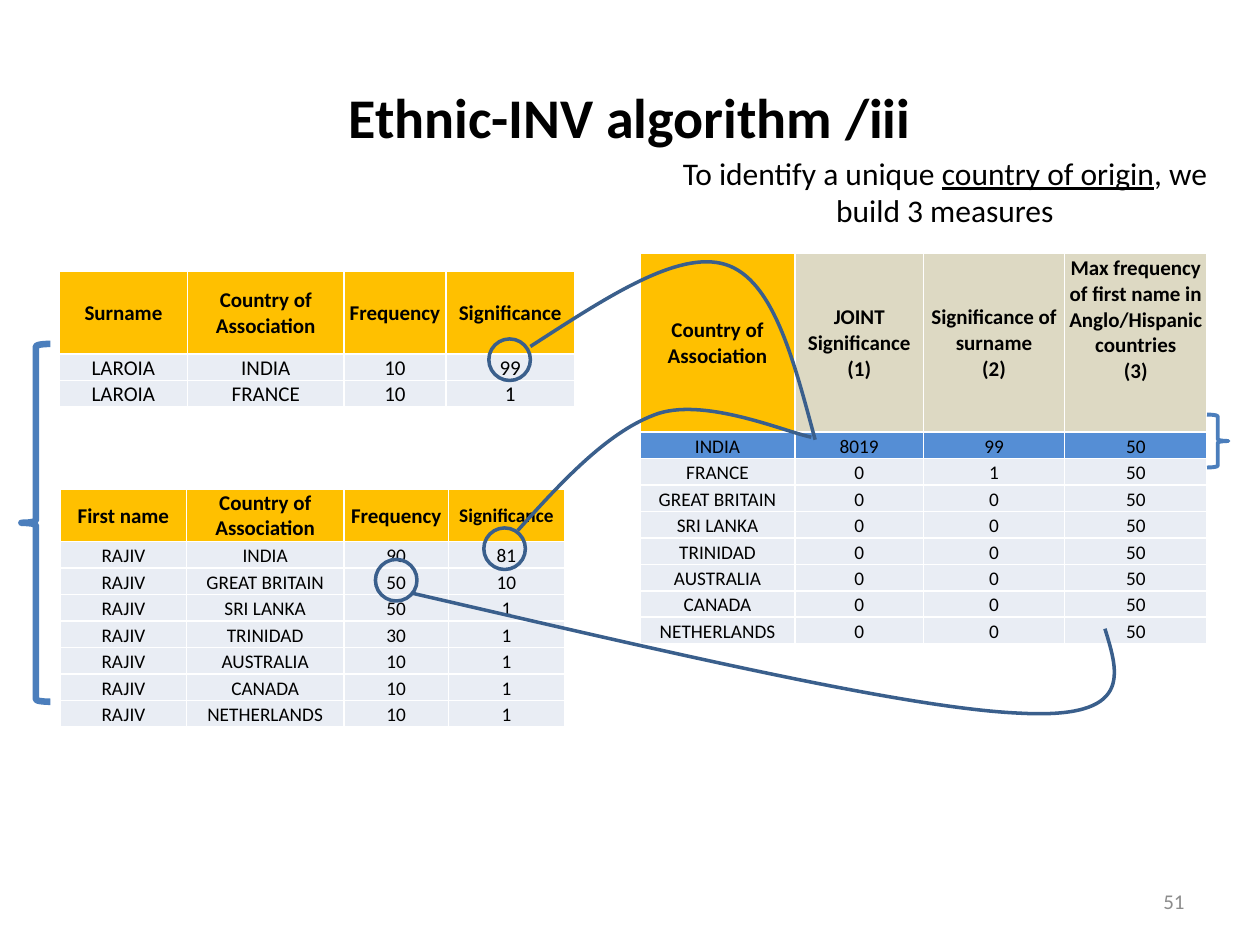
from lxml.etree import SubElement
from pptx import Presentation
from pptx.dml.color import RGBColor
from pptx.enum.shapes import MSO_SHAPE
from pptx.enum.text import MSO_ANCHOR, PP_ALIGN
from pptx.oxml.ns import qn
from pptx.util import Inches, Pt

COLORS = {
    "black": "000000",
    "grey": "8C8C8C",
    "white": "FFFFFF",
    "amber": "FFC000",
    "sand": "DDD9C3",
    "pale": "E9EDF4",
    "highlight": "558ED5",
    "brace": "4B7EBC",
    "mark": "3A5F8C",
}


def write(frame, text, size=12, color="black", bold=False, align=PP_ALIGN.CENTER,
          anchor=MSO_ANCHOR.MIDDLE, underlined=""):
    frame.word_wrap = True
    frame.vertical_anchor = anchor
    for number, line in enumerate(text.split("\n")):
        para = frame.paragraphs[0] if number == 0 else frame.add_paragraph()
        para.alignment = align
        for part in line.partition(underlined) if underlined else [line]:
            span = para.add_run()
            span.text = part
            span.font.name = "Calibri"
            span.font.size = Pt(size)
            span.font.bold = bold
            span.font.underline = part == underlined
            span.font.color.rgb = RGBColor.from_string(COLORS[color])


def outline(shape, color, width):
    shape.shadow.inherit = False
    shape.fill.background()
    shape.line.color.rgb = RGBColor.from_string(COLORS[color])
    shape.line.width = Pt(width)


deck = Presentation()
deck.slide_width, deck.slide_height = Inches(10), Inches(7.5)
page = deck.slides.add_slide(deck.slide_layouts[5])

title = page.shapes.title
title.left, title.top = Inches(0.5), Inches(0.3)
title.width, title.height = Inches(9), Inches(1.25)
write(title.text_frame, "Ethnic-INV algorithm /iii", size=32, bold=True)

number_box = page.shapes.add_textbox(Inches(7.17), Inches(6.95), Inches(2.33), Inches(0.4))
write(number_box.text_frame, "51", color="grey", align=PP_ALIGN.RIGHT)

surname_rows = [
    ["Surname", "Country of Association", "Frequency", "Significance"],
    ["LAROIA", "INDIA", "10", "99"],
    ["LAROIA", "FRANCE", "10", "1"],
]
first_name_counts = [
    ("INDIA", "90", "81"), ("GREAT BRITAIN", "50", "10"), ("SRI LANKA", "50", "1"),
    ("TRINIDAD", "30", "1"), ("AUSTRALIA", "10", "1"), ("CANADA", "10", "1"),
    ("NETHERLANDS", "10", "1"),
]
first_name_rows = [["First name", "Country of Association", "Frequency", "Significance"]]
first_name_rows += [["RAJIV", *counts] for counts in first_name_counts]
joint_rows = [
    ["Country of Association", "JOINT\nSignificance\n(1)", "Significance of surname\n(2)",
     "Max frequency of first name in Anglo/Hispanic countries\n(3)"],
    ["INDIA", "8019", "99", "50"],
    ["FRANCE", "0", "1", "50"],
]
joint_rows += [[country, "0", "0", "50"] for country, *_ in first_name_counts[1:]]

tables = [
    (0.47, 2.15, [1.02, 1.24, 0.81, 1.02], 0.66, 12, surname_rows),
    (0.48, 3.88, [1, 1.25, 0.83, 0.92], 0.42, 11, first_name_rows),
    (5.08, 2.01, [1.23, 1.02, 1.12, 1.13], 1.42, 11, joint_rows),
]
for left, top, widths, header_height, body_size, rows in tables:
    heights = [header_height] + [0.21] * (len(rows) - 1)
    table = page.shapes.add_table(len(rows), len(widths), Inches(left), Inches(top),
                                  Inches(sum(widths)), Inches(sum(heights))).table
    for column, width in zip(table.columns, widths):
        column.width = Inches(width)
    for r, values in enumerate(rows):
        table.rows[r].height = Inches(heights[r])
        for c, value in enumerate(values):
            cell = table.cell(r, c)
            cell.margin_left = cell.margin_right = cell.margin_top = Inches(0.01)
            cell.margin_bottom = Inches(0.37 if value.startswith("Max") else 0)
            cell.vertical_anchor = MSO_ANCHOR.BOTTOM if r else MSO_ANCHOR.MIDDLE
            for side in ("lnL", "lnR", "lnT", "lnB"):
                border = SubElement(cell._tc.get_or_add_tcPr(), qn(f"a:{side}"), w=str(Pt(1)))
                paint = SubElement(border, qn("a:solidFill"))
                SubElement(paint, qn("a:srgbClr"), val=COLORS["white"])
            if r == 0:
                fill = "sand" if rows is joint_rows and c else "amber"
            else:
                fill = "highlight" if rows is joint_rows and r == 1 else "pale"
            cell.fill.solid()
            cell.fill.fore_color.rgb = RGBColor.from_string(COLORS[fill])
            small_header = rows is first_name_rows and c == 3
            write(cell.text_frame, value, size=body_size if r or small_header else 12,
                  bold=r == 0, anchor=None)

marks = [
    (MSO_SHAPE.LEFT_BRACE, 0.17, 2.73, 0.23, 2.84, "brace", 3.75),
    (MSO_SHAPE.OVAL, 3.88, 2.69, 0.33, 0.33, "mark", 2),
    (MSO_SHAPE.OVAL, 3.84, 4.19, 0.33, 0.33, "mark", 2),
    (MSO_SHAPE.OVAL, 2.98, 4.44, 0.33, 0.33, "mark", 2),
    (MSO_SHAPE.RIGHT_BRACE, 9.58, 3.29, 0.17, 0.42, "brace", 2.25),
]
for kind, left, top, width, height, color, weight in marks:
    mark = page.shapes.add_shape(kind, Inches(left), Inches(top), Inches(width), Inches(height))
    outline(mark, color, weight)

curves = [
    ((4.21, 2.08, 2.26, 1.42),
     [(4.21, 2.75), (4.8, 2.37), (5.38, 1.98), (5.76, 2.1), (6.14, 2.22), (6.3, 2.86), (6.47, 3.49)]),
    ((4.11, 3.25, 2.34, 0.95),
     [(4.11, 4.21), (4.47, 3.81), (4.84, 3.41), (5.23, 3.28), (5.62, 3.16), (6.24, 3.43), (6.44, 3.47)]),
    ((3.28, 4.71, 5.56, 0.95),
     [(3.28, 4.71), (5.23, 5.16), (7.17, 5.62), (8.09, 5.66), (9, 5.71), (8.88, 5.35), (8.77, 4.99)]),
]
for bounds, knots in curves:
    builder = page.shapes.build_freeform(Inches(knots[0][0]), Inches(knots[0][1]))
    builder.add_line_segments([(Inches(x), Inches(y)) for x, y in knots[3::3]], close=False)
    curve = builder.convert_to_shape()
    curve.left, curve.top, curve.width, curve.height = [Inches(length) for length in bounds]
    track = next(curve._element.iter(qn("a:path")))
    track.set("w", str(curve.width))
    track.set("h", str(curve.height))
    for segment in list(track):
        track.remove(segment)
    for tag, points in (("moveTo", knots[:1]), ("cubicBezTo", knots[1:4]), ("cubicBezTo", knots[4:])):
        segment = SubElement(track, qn(f"a:{tag}"))
        for x, y in points:
            SubElement(segment, qn("a:pt"), x=str(Inches(x) - curve.left), y=str(Inches(y) - curve.top))
    outline(curve, "mark", 2)

measures_box = page.shapes.add_textbox(Inches(5.25), Inches(1.17), Inches(4.5), Inches(0.71))
write(measures_box.text_frame, "To identify a unique country of origin, we build 3 measures",
      size=18, anchor=MSO_ANCHOR.TOP, underlined="country of origin")

deck.save("out.pptx")
